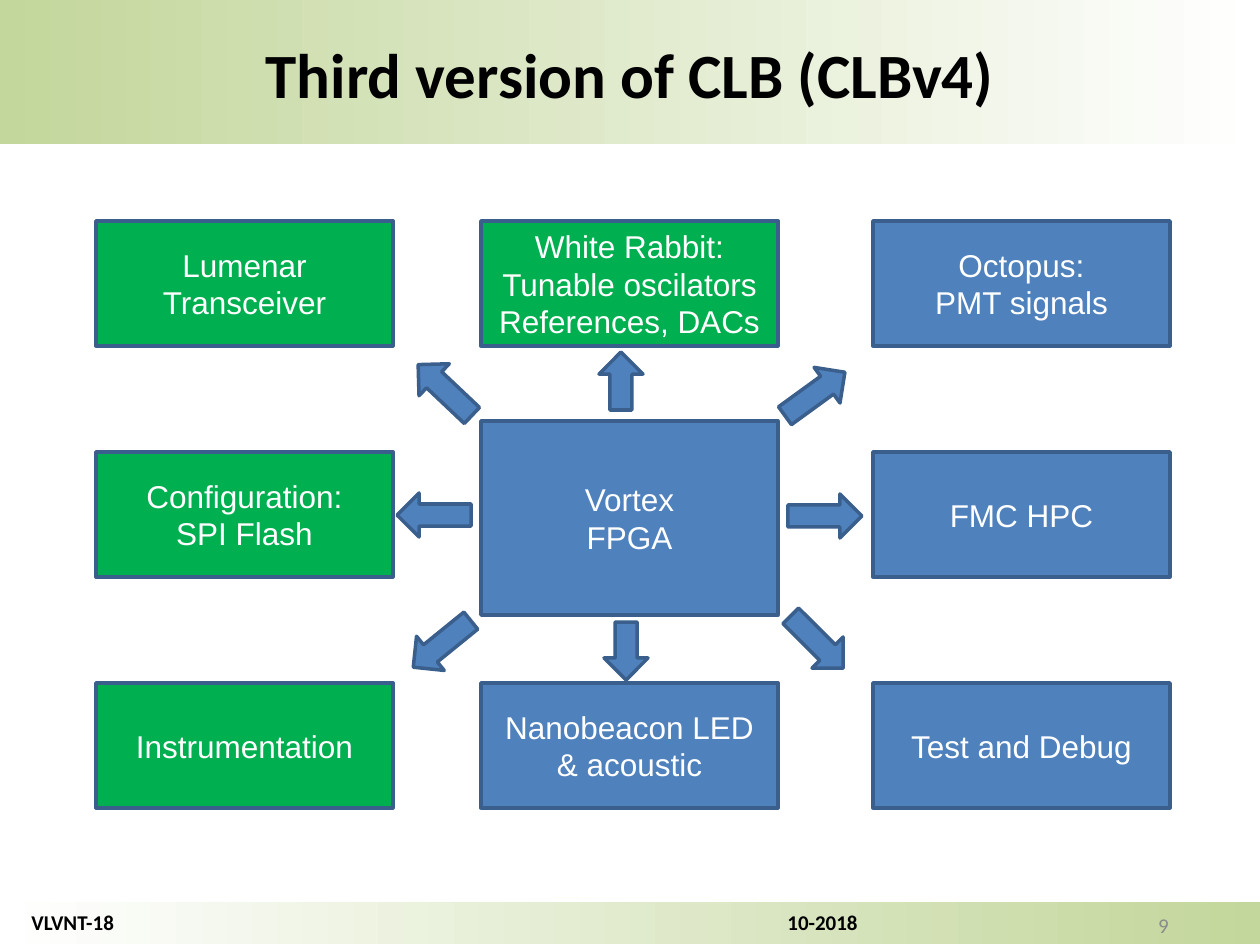
from lxml import etree
from pptx import Presentation
from pptx.dml.color import RGBColor
from pptx.enum.shapes import MSO_SHAPE
from pptx.enum.text import MSO_ANCHOR, PP_ALIGN
from pptx.oxml.ns import qn
from pptx.util import Pt

RECTANGLE, ARROW = MSO_SHAPE.RECTANGLE, MSO_SHAPE.RIGHT_ARROW
TOP, MIDDLE = MSO_ANCHOR.TOP, MSO_ANCHOR.MIDDLE
LEFT, CENTER, RIGHT = PP_ALIGN.LEFT, PP_ALIGN.CENTER, PP_ALIGN.RIGHT

COLORS = {
    "olive": "C3D69B", "white": "FFFFFF", "black": "000000", "gray": "8B8B8B",
    "green": "00B050", "blue": "4F81BD", "outline": "3A5F8C",
}


def px(value):
    return round(value * 914400 / 126)


def color(name):
    return RGBColor.from_string(COLORS[name])


class SlideBuilder:
    heading_font = "Calibri"
    box_font = "Arial"

    def __init__(self, slide):
        self.slide = slide

    def shape(self, kind, left, top, width, height):
        shape = self.slide.shapes.add_shape(
            kind, px(left), px(top), px(width), px(height))
        shape.shadow.inherit = False
        return shape

    def add_text(self, shape, lines, size, font, ink, align, anchor, bold=False):
        frame = shape.text_frame
        frame.word_wrap = True
        frame.vertical_anchor = anchor
        for index, line in enumerate(lines):
            paragraph = frame.paragraphs[0] if index == 0 else frame.add_paragraph()
            paragraph.alignment = align
            run = paragraph.add_run()
            run.text = line
            run.font.size = Pt(size)
            run.font.name = font
            run.font.bold = bold
            run.font.color.rgb = color(ink)

    def band(self, top, height, angle=0):
        band = self.shape(RECTANGLE, 0, top, 1260, height)
        band.line.fill.background()
        band.fill.gradient()
        band.fill.gradient_angle = angle
        for stop, name in zip(band.fill.gradient_stops, ("olive", "white")):
            stop.color.rgb = color(name)
        return band

    def label(self, left, top, width, height, text, ink, align, anchor, bold=False):
        label = self.slide.shapes.add_textbox(
            px(left), px(top), px(width), px(height))
        self.add_text(label, [text], 12, self.heading_font, ink, align, anchor, bold)
        return label

    def solid(self, shape, fill):
        shape.fill.solid()
        shape.fill.fore_color.rgb = color(fill)
        shape.line.color.rgb = color("outline")
        shape.line.width = Pt(2)

    def box(self, left, top, width, height, fill, lines):
        box = self.shape(RECTANGLE, left, top, width, height)
        self.solid(box, fill)
        self.add_text(box, lines, 18, self.box_font, "white", CENTER, MIDDLE)

    def arrow(self, center_x, center_y, length, rotation):
        thickness = 44
        arrow = self.shape(ARROW, center_x - length // 2,
                           center_y - thickness // 2, length, thickness)
        self.solid(arrow, "blue")
        arrow.rotation = rotation


def add_tab_stop(paragraph, position):
    tabs = etree.SubElement(paragraph._p.get_or_add_pPr(), qn("a:tabLst"))
    etree.SubElement(tabs, qn("a:tab"), pos=str(px(position)), algn="l")


def main():
    presentation = Presentation()
    presentation.slide_width, presentation.slide_height = px(1260), px(945)
    slide = presentation.slides.add_slide(presentation.slide_layouts[6])
    builder = SlideBuilder(slide)

    # Footer and title bands
    builder.band(902, 42, angle=180)
    builder.band(0, 137)
    title = builder.band(29, 88)
    builder.add_text(title, ["Third version of CLB (CLBv4)"], 36,
                     builder.heading_font, "black", CENTER, TOP, bold=True)
    builder.band(137, 7)

    # Footer text
    builder.label(887, 900, 294, 50, "9", "gray", RIGHT, MIDDLE)
    footer = builder.label(19, 903, 1226, 38, "VLVNT-18\t10-2018",
                           "black", LEFT, TOP, bold=True)
    add_tab_stop(footer.text_frame.paragraphs[0], 756)

    # Peripheral boxes around the FPGA
    columns = (96, 481, 873)
    first_row, row_step = 221, 231
    box_width, box_height = 297, 125
    peripherals = [
        (0, 0, "green", ["Lumenar Transceiver"]),
        (1, 0, "green", ["White Rabbit:", "Tunable oscilators", "References, DACs"]),
        (2, 0, "blue", ["Octopus:", "PMT signals"]),
        (0, 1, "green", ["Configuration:", "SPI Flash"]),
        (2, 1, "blue", ["FMC HPC"]),
        (0, 2, "green", ["Instrumentation"]),
        (1, 2, "blue", ["Nanobeacon LED & acoustic"]),
        (2, 2, "blue", ["Test and Debug"]),
    ]
    for column, row, fill, lines in peripherals:
        builder.box(columns[column], first_row + row * row_step,
                    box_width, box_height, fill, lines)

    # Central FPGA
    builder.box(columns[1], 421, box_width, 194, "blue", ["Vortex", "FPGA"])

    # Arrows: center x, center y, length, rotation
    long, short = 74, 58
    for arrow in [
        (825, 516, long, 0), (621, 381, short, 270),
        (626, 651, short, 90), (434, 515, long, 180),
        (445, 390, long, 223.4), (815, 394, long, 324),
        (817, 642, long, 44.9), (442, 644, long, 141),
    ]:
        builder.arrow(*arrow)

    presentation.save("out.pptx")


if __name__ == "__main__":
    main()
